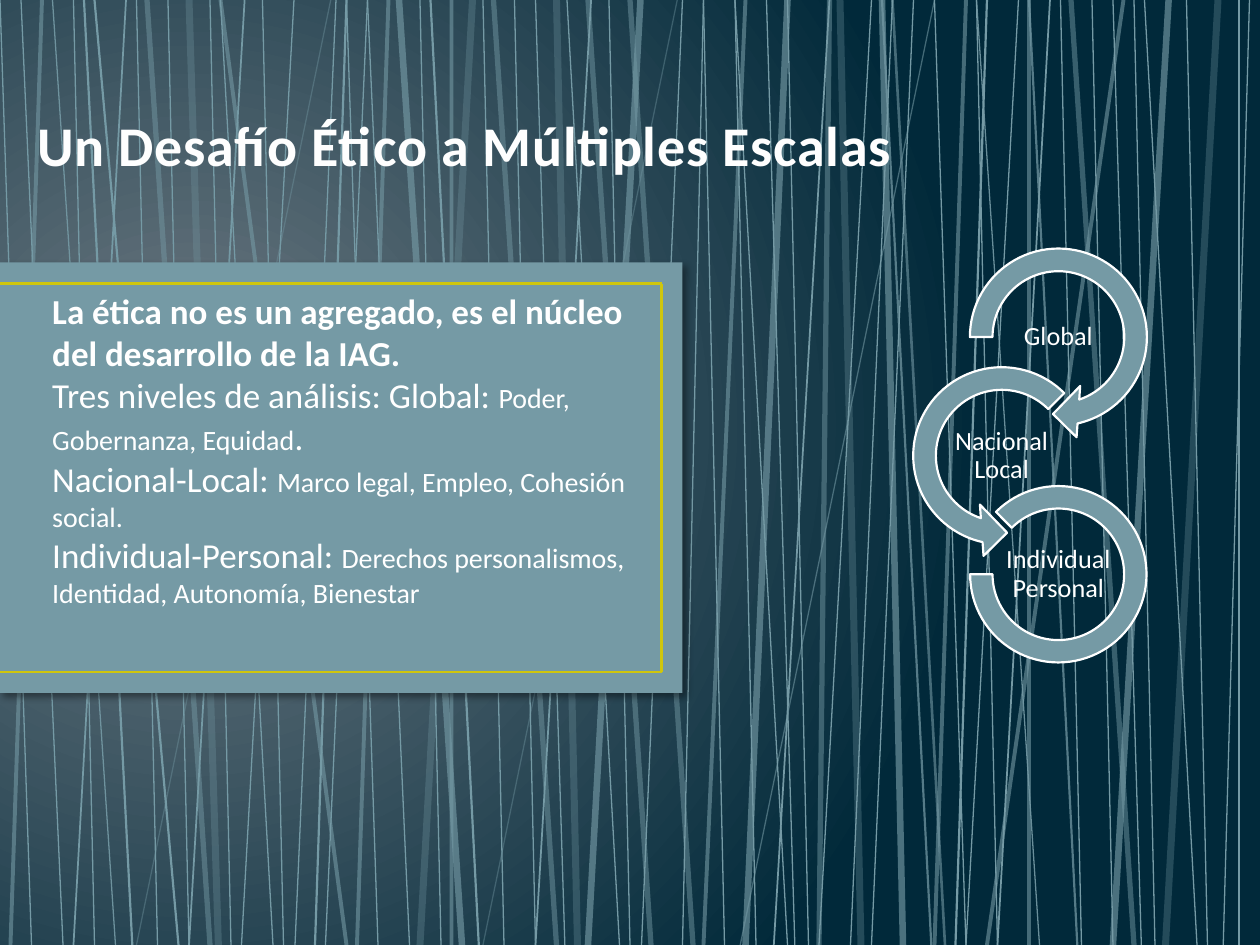
from lxml.etree import SubElement, fromstring
from pptx import Presentation
from pptx.dml.color import RGBColor
from pptx.enum.shapes import MSO_CONNECTOR, MSO_SHAPE
from pptx.enum.text import MSO_ANCHOR, MSO_AUTO_SIZE, PP_ALIGN
from pptx.oxml.ns import nsdecls, qn
from pptx.util import Pt

PX = 914400 // 120
WIDTH, HEIGHT = 1200, 900
TEAL, GOLD, WHITE = "759AA5", "CFC60D", "FFFFFF"


def paint(fill, color):
    fill.solid()
    fill.fore_color.rgb = RGBColor.from_string(color)


def draw_line(start, end, color, width, opacity=100):
    ends = [length * PX for length in (*start, *end)]
    connector = slide.shapes.add_connector(MSO_CONNECTOR.STRAIGHT, *ends)
    connector.line.width = Pt(width)
    paint(connector.line.fill, color)
    properties = connector.element.spPr
    if opacity < 100:
        tint = next(properties.iter(qn("a:srgbClr")))
        SubElement(tint, qn("a:alpha")).set("val", str(opacity * 1000))
    SubElement(properties, qn("a:effectLst"))


presentation = Presentation()
presentation.slide_width = WIDTH * PX
presentation.slide_height = HEIGHT * PX
slide = presentation.slides.add_slide(presentation.slide_layouts[6])

paint(slide.background.fill, "01293A")
backdrop = next(slide.element.iter(qn("p:bgPr")))
backdrop.replace(backdrop[0], fromstring(
    f'<a:gradFill {nsdecls("a")} rotWithShape="1"><a:gsLst>'
    '<a:gs pos="0"><a:srgbClr val="717C84"/></a:gs>'
    '<a:gs pos="100000"><a:srgbClr val="01293A"/></a:gs></a:gsLst>'
    '<a:path path="circle">'
    '<a:fillToRect l="15000" t="50000" r="85000" b="60000"/>'
    '</a:path></a:gradFill>'))

strands = {
    (0.75, 100): [
        (250, 270), (210, 260), (280, 230), (0, 30), (20, 60), (200, 220),
        (70, 90), (320, 281), (350, 310), (130, 150), (160, 180), (580, 600),
        (540, 590), (330, 360), (350, 390), (400, 420), (650, 611),
        (670, 650), (510, 538), (460, 480), (490, 510), (700, 750),
        (830, 780), (750, 770), (870, 830), (850, 810), (730, 757),
        (670, 690), (700, 720), (890, 920), (930, 950), (1010, 1030),
        (1040, 1060), (1130, 1150), (1090, 1140), (1080, 1100),
        (1190, 1165), (1060, 1087), (970, 920)],
    (0.75, 90): [(50, 110), (930, 990)],
    (0.75, 56): [(890, 705)],
    (0.75, 39): [(315, 130), (645, 460)],
    (1, 100): [(120, 70), (233, 180), (563, 510), (790, 737), (1000, 950)],
    (1.25, 100): [(90, 170), (80, 126), (330, 300), (410, 456), (940, 910),
                  (1180, 1180)],
    (1.25, 72): [(980, 1026), (840, 887)],
    (1.5, 58): [(850, 900)],
    (2.25, 58): [(40, 10), (210, 330), (370, 340), (430, 430), (710, 670),
                 (920, 890), (980, 980), (1070, 940)],
    (3, 47): [(140, 200), (470, 530), (560, 620), (1020, 1080), (790, 780),
              (600, 660)],
    (3.75, 63): [(610, 560), (380, 440), (1113, 1060), (840, 860),
                 (750, 710)],
    (4, 30): [(180, 208), (450, 400), (530, 550), (800, 820), (1160, 1110)],
}
for (width, opacity), spans in strands.items():
    for top, bottom in spans:
        draw_line((top, 0), (bottom, HEIGHT), TEAL, width, opacity)

panel = slide.shapes.add_shape(
    MSO_SHAPE.RECTANGLE, 0, 250 * PX, 650 * PX, 410 * PX)
paint(panel.fill, TEAL)
panel.line.fill.background()
panel.shadow.inherit = False
panel.element.spPr.find(qn("a:effectLst")).append(fromstring(
    f'<a:outerShdw {nsdecls("a")} blurRad="50800" dist="38100" dir="2700000" '
    'algn="tl" rotWithShape="0"><a:srgbClr val="000000">'
    '<a:alpha val="40000"/></a:srgbClr></a:outerShdw>'))

for start, end in [((0, 270), (630, 270)), ((0, 640), (630, 640)),
                   ((630, 270), (630, 640))]:
    draw_line(start, end, GOLD, 1.5)

title_frame = {"word_wrap": True, "vertical_anchor": MSO_ANCHOR.BOTTOM}
body_frame = {"word_wrap": True, "auto_size": MSO_AUTO_SIZE.SHAPE_TO_FIT_TEXT}
label_frame = {"word_wrap": True, "vertical_anchor": MSO_ANCHOR.MIDDLE,
               "margin_left": PX, "margin_right": PX,
               "margin_top": PX, "margin_bottom": PX}
label_paragraph = {"alignment": PP_ALIGN.CENTER, "line_spacing": 0.9}

texts = [
    ((24, 62, 1153, 113), title_frame, {}, "FEFEFE",
     [[("Un Desafío Ético a Múltiples Escalas", 32, True)]]),
    ((38, 270, 595, 319), body_frame, {}, WHITE, [
        [("La ética no es un agregado, es el núcleo del desarrollo de la IAG.",
          20, True)],
        [("Tres niveles de análisis: Global: ", 20, False),
         ("Poder, Gobernanza, Equidad", 16, False), (".", 20, False)],
        [("Nacional-Local: ", 20, False),
         ("Marco legal, Empleo, Cohesión social.", 16, False)],
        [("Individual-Personal: ", 20, False),
         ("Derechos personalismos, Identidad, Autonomía, Bienestar",
          16, False)],
    ]),
]

levels = [
    ("Global", MSO_SHAPE.CIRCULAR_ARROW, 1008, 196,
     (0.11, 11.42, 45, 108, 0.125)),
    ("Nacional Local", MSO_SHAPE.LEFT_CIRCULAR_ARROW, 954, 196,
     (0.11, 11.42, 63, 189, 0.125)),
    ("Individual Personal", MSO_SHAPE.BLOCK_ARC, 1008, 168,
     (135, 108, 0.127)),
]
for row, (level, outline, center, size, bends) in enumerate(levels):
    middle = 321 + 113 * row
    ring = slide.shapes.add_shape(
        outline, (center - size // 2) * PX, (middle - size // 2) * PX,
        size * PX, size * PX)
    for index, bend in enumerate(bends):
        ring.adjustments[index] = bend
    paint(ring.fill, TEAL)
    paint(ring.line.fill, WHITE)
    ring.line.width = Pt(1.25)
    ring.shadow.inherit = False
    texts.append(((center - 55, middle - 27, 110, 54), label_frame,
                  label_paragraph, WHITE, [[(level, 15, False)]]))

for place, frame_format, paragraph_format, color, paragraphs in texts:
    frame = slide.shapes.add_textbox(*[n * PX for n in place]).text_frame
    for key, value in frame_format.items():
        setattr(frame, key, value)
    for number, pieces in enumerate(paragraphs):
        paragraph = frame.add_paragraph() if number else frame.paragraphs[0]
        for key, value in paragraph_format.items():
            setattr(paragraph, key, value)
        for wording, size, bold in pieces:
            run = paragraph.add_run()
            run.text = wording
            font_format = {"name": "Calibri", "size": Pt(size), "bold": bold}
            for key, value in font_format.items():
                setattr(run.font, key, value)
            paint(run.font.fill, color)
            if frame_format is title_frame:
                run.font._element.set("spc", "40")

presentation.save("out.pptx")
